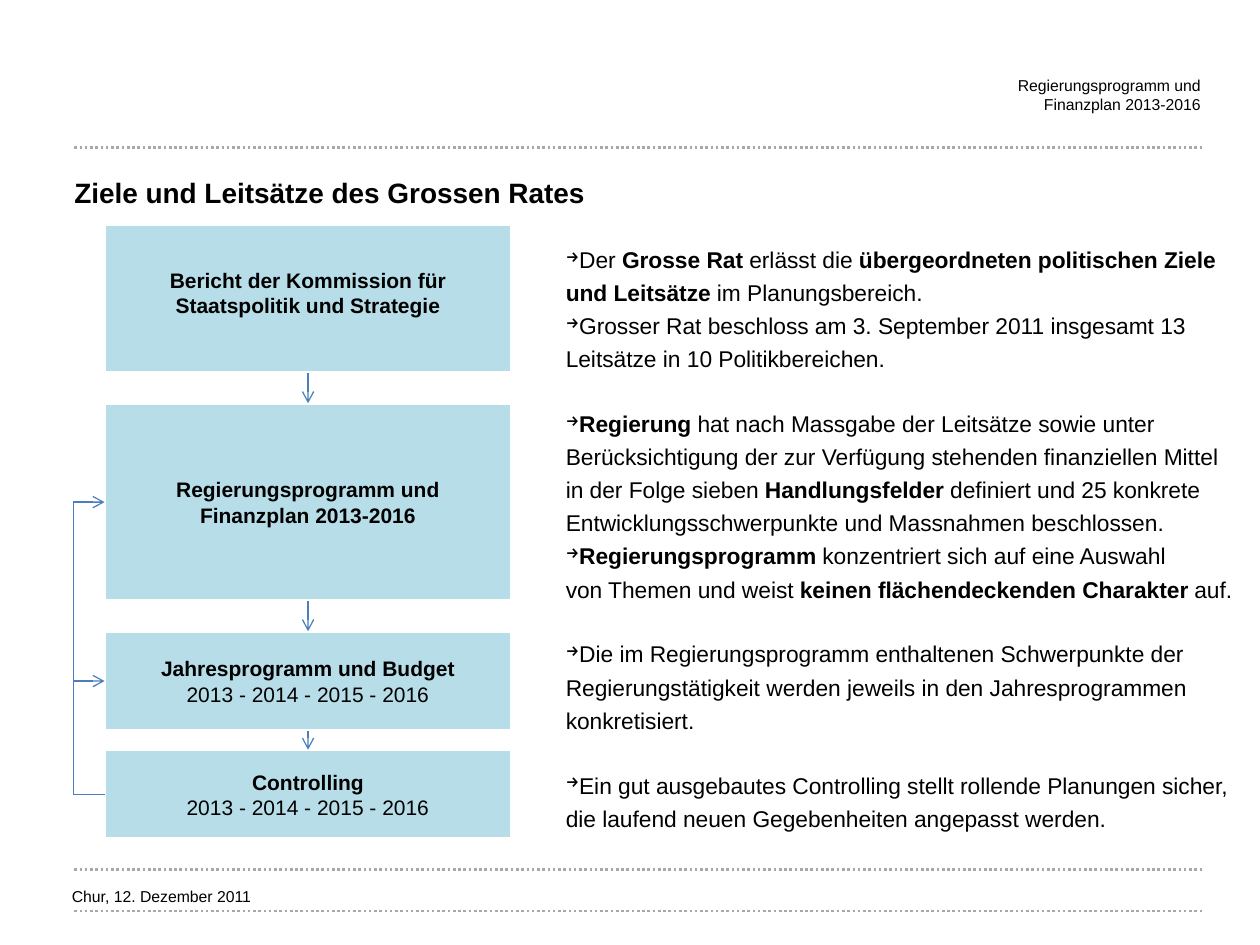
"""Build the slide on the goals and guiding principles of the Grosser Rat."""
import lxml.etree
import pptx
import pptx.dml.color
import pptx.enum.dml
import pptx.enum.shapes
import pptx.enum.text
import pptx.oxml.ns
import pptx.util

THEME = {
    "font": "Arial",
    "text": pptx.dml.color.RGBColor.from_string("000000"),
    "box": pptx.dml.color.RGBColor.from_string("B7DEE8"),
    "border": pptx.dml.color.RGBColor.from_string("FFFFFF"),
    "arrow": pptx.dml.color.RGBColor.from_string("4B7EBC"),
    "rule": pptx.dml.color.RGBColor.from_string("A7A8AA"),
    "small": 9, "label": 12, "body": 13, "title": 16,
}
ALIGN = pptx.enum.text.PP_ALIGN
ANCHOR = pptx.enum.text.MSO_ANCHOR
CONNECTOR = pptx.enum.shapes.MSO_CONNECTOR
qn = pptx.oxml.ns.qn

presentation = pptx.Presentation()
presentation.slide_width = pptx.util.Inches(10)
presentation.slide_height = pptx.util.Inches(7.5)
cell = presentation.slide_width // 100
slide = presentation.slides.add_slide(presentation.slide_layouts[5])
shapes = slide.shapes


def write(shape, lines, size, align=ALIGN.LEFT, anchor=ANCHOR.TOP, inset=0):
    """Fill a shape with lines in which asterisks switch bold on and off."""
    frame = shape.text_frame
    frame.word_wrap = True
    frame.auto_size = pptx.enum.text.MSO_AUTO_SIZE.NONE
    frame.vertical_anchor = anchor
    frame.margin_left = frame.margin_right = inset
    frame.margin_top = frame.margin_bottom = inset // 2
    for index, line in enumerate(lines):
        paragraph = frame.paragraphs[0] if index == 0 else frame.add_paragraph()
        paragraph.alignment = align
        if line.startswith("→"):
            properties = paragraph._p.get_or_add_pPr()
            lxml.etree.SubElement(properties, qn("a:buSzPct"), val="75000")
            lxml.etree.SubElement(properties, qn("a:buChar"), char="→")
        paragraph.font.name = THEME["font"]
        paragraph.font.size = pptx.util.Pt(size)
        paragraph.font.color.rgb = THEME["text"]
        for part, text in enumerate(line.removeprefix("→").split("*")):
            if text:
                run = paragraph.add_run()
                run.text = text
                run.font.bold = part % 2 == 1
    return frame


def connect(kind, start, end, color, width, arrow=False):
    """Draw a shadowless connector between two grid points."""
    connector = shapes.add_connector(kind, *(round(value * cell) for value in (*start, *end)))
    connector.line.color.rgb = color
    connector.line.width = pptx.util.Pt(width)
    if arrow:
        lxml.etree.SubElement(connector.line._get_or_add_ln(), qn("a:tailEnd"), type="arrow")
    lxml.etree.SubElement(connector._element.spPr, qn("a:effectLst"))
    return connector


for top in (11.7, 69, 72.3):
    rule = connect(CONNECTOR.STRAIGHT, (5.9, top), (95.4, top), THEME["rule"], 1.5)
    rule.line.dash_style = pptx.enum.dml.MSO_LINE.ROUND_DOT

header = shapes.add_textbox(50 * cell, 6 * cell, round(45.3 * cell), round(4.4 * cell))
write(header, ["Regierungsprogramm und", "Finanzplan 2013-2016"], THEME["small"], ALIGN.RIGHT)

title = shapes.title
title.left, title.top, title.width, title.height = (
    round(value * cell) for value in (5.9, 13.9, 89.5, 3.3))
write(title, ["*Ziele und Leitsätze des Grossen Rates*"], THEME["title"])

sections = [
    ["→Der *Grosse Rat* erlässt die *übergeordneten politischen Ziele*",
     "*und Leitsätze* im Planungsbereich.",
     "→Grosser Rat beschloss am 3. September 2011 insgesamt 13",
     "Leitsätze in 10 Politikbereichen."],
    ["→*Regierung* hat nach Massgabe der Leitsätze sowie unter",
     "Berücksichtigung der zur Verfügung stehenden finanziellen Mittel",
     "in der Folge sieben *Handlungsfelder* definiert und 25 konkrete",
     "Entwicklungsschwerpunkte und Massnahmen beschlossen.",
     "→*Regierungsprogramm* konzentriert sich auf eine Auswahl",
     "von Themen und weist *keinen flächendeckenden Charakter* auf."],
    ["→Die im Regierungsprogramm enthaltenen Schwerpunkte der",
     "Regierungstätigkeit werden jeweils in den Jahresprogrammen",
     "konkretisiert."],
    ["→Ein gut ausgebautes Controlling stellt rollende Planungen sicher,",
     "die laufend neuen Gegebenheiten angepasst werden."],
]
body = shapes.add_textbox(*(round(value * cell) for value in (42.9, 19.5, 55.9, 48)))
frame = write(body, sum(sections, []), THEME["body"])
section_starts = [sum(map(len, sections[:count])) for count in range(1, len(sections))]
for index, paragraph in enumerate(frame.paragraphs):
    properties = paragraph._p.get_or_add_pPr()
    properties.set("marL", "0")
    properties.set("indent", str(2 * cell))
    if index:
        paragraph.space_before = pptx.util.Pt(21.5 if index in section_starts else 3.3)

footer = shapes.add_textbox(*(round(value * cell) for value in (5.7, 69.6, 18.4, 2.4)))
write(footer, ["Chur, 12. Dezember 2011"], THEME["small"]).paragraphs[0].line_spacing = 1.5

steps = [
    (17.8, 11.8, ["*Bericht der Kommission für*", "*Staatspolitik und Strategie*"]),
    (32, 15.7, ["*Regierungsprogramm und*", "*Finanzplan 2013-2016*"]),
    (50.1, 7.9, ["*Jahresprogramm und Budget*", "2013 - 2014 - 2015 - 2016"]),
    (59.5, 7.1, ["*Controlling*", "2013 - 2014 - 2015 - 2016"]),
]
boxes = []
for top, height, lines in steps:
    box = shapes.add_shape(pptx.enum.shapes.MSO_SHAPE.RECTANGLE,
                           *(round(value * cell) for value in (8.3, top, 32.3, height)))
    box.shadow.inherit = False
    box.fill.solid()
    box.fill.fore_color.rgb = THEME["box"]
    box.line.color.rgb = THEME["border"]
    box.line.width = pptx.util.Pt(2)
    write(box, lines, THEME["label"], ALIGN.CENTER, ANCHOR.MIDDLE, cell)
    boxes.append(box)
boxes[0].text_frame.margin_bottom = round(1.5 * cell)

for upper, lower in zip(boxes, boxes[1:]):
    arrow = connect(CONNECTOR.STRAIGHT, (0, 0), (1, 1), THEME["arrow"], 0.75, True)
    arrow.begin_connect(upper, 2)
    arrow.end_connect(lower, 0)

middles = [top + height / 2 for top, height, lines in steps]
depth, span = 2.5, 0.02
for target in (middles[2], middles[1]):
    feedback = connect(CONNECTOR.ELBOW, (8.3, target), (8.3 + span, middles[3]),
                       THEME["arrow"], 0.75, True)
    feedback._element.spPr.find(qn("a:xfrm")).set("rot", "10800000")
    adjustments = feedback._element.spPr.find(qn("a:prstGeom")).get_or_add_avLst()
    lxml.etree.SubElement(adjustments, qn("a:gd"), name="adj1",
                          fmla=f"val {round(depth / span * 100000)}")

presentation.save("out.pptx")
